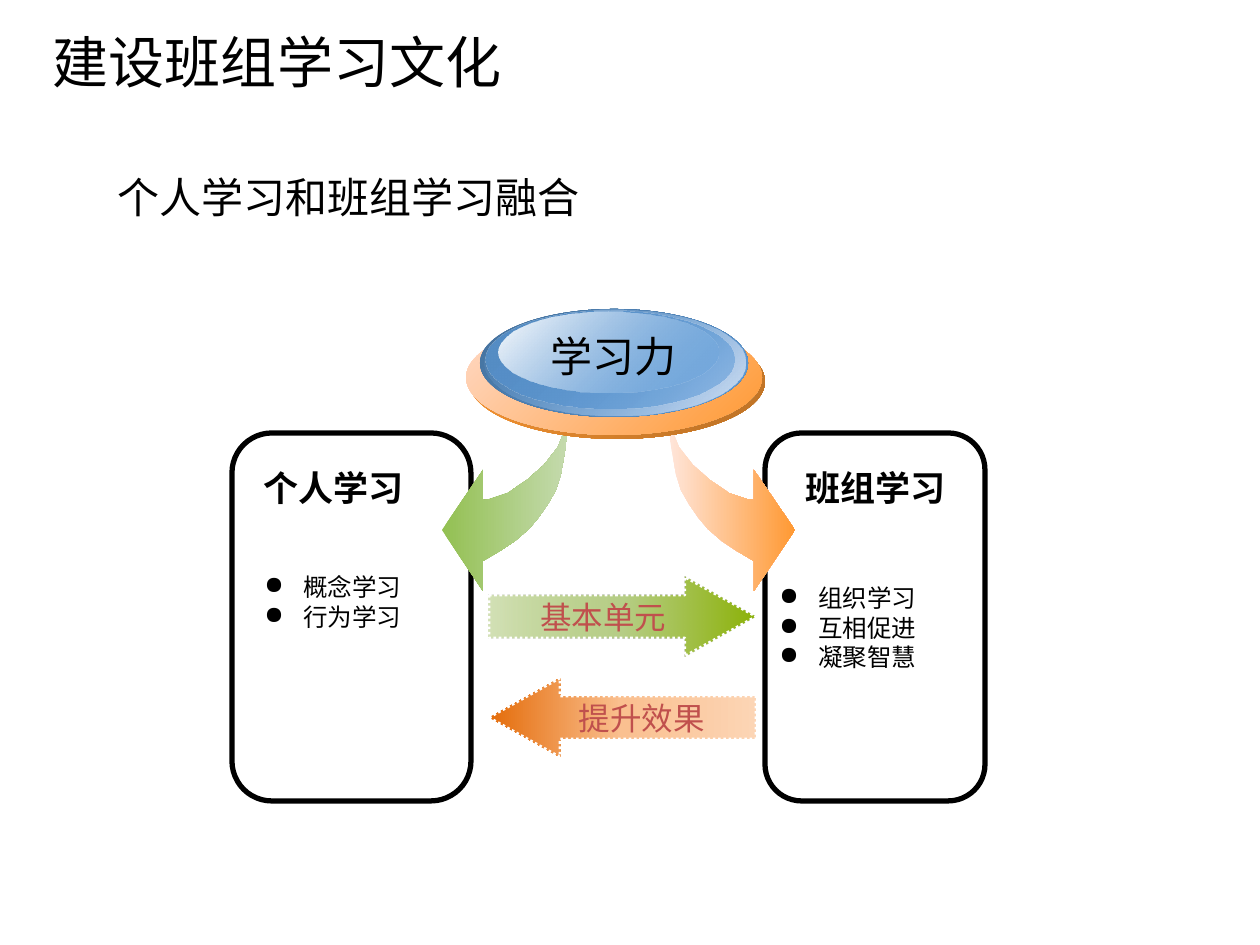
from lxml import etree
from pptx import Presentation
from pptx.dml.color import RGBColor
from pptx.enum.dml import MSO_LINE
from pptx.enum.shapes import MSO_SHAPE
from pptx.enum.text import MSO_ANCHOR, PP_ALIGN
from pptx.oxml.ns import qn
from pptx.util import Emu, Pt

PX_PER_INCH = 126
ROUND_RECT, OVAL = MSO_SHAPE.ROUNDED_RECTANGLE, MSO_SHAPE.OVAL
LEFT_ARROW, RIGHT_ARROW = MSO_SHAPE.LEFT_ARROW, MSO_SHAPE.RIGHT_ARROW
DOTTED = MSO_LINE.ROUND_DOT
TOP, MIDDLE = MSO_ANCHOR.TOP, MSO_ANCHOR.MIDDLE
LEFT, CENTER = PP_ALIGN.LEFT, PP_ALIGN.CENTER
CJK, ARIAL, CALIBRI = "Noto Sans CJK SC", "Arial", "Calibri"

BLACK = RGBColor(0x00, 0x00, 0x00)
WHITE = RGBColor(0xFF, 0xFF, 0xFF)
RED = RGBColor(0xC0, 0x50, 0x4D)
LEAF = RGBColor(0x93, 0xC0, 0x52)
LEAF_PALE = RGBColor(0xC4, 0xDA, 0xAD)
ORANGE = RGBColor(0xFF, 0x99, 0x33)
ORANGE_DARK = RGBColor(0xBA, 0x70, 0x25)
PEACH = RGBColor(0xFF, 0xDA, 0xC7)
PEACH_PALE = RGBColor(0xFF, 0xE5, 0xD9)
NAVY = RGBColor(0x43, 0x70, 0x9C)
STEEL = RGBColor(0x55, 0x8D, 0xC5)
BLUE = RGBColor(0x5E, 0x9C, 0xDA)
BLUE_PALE = RGBColor(0xD8, 0xE3, 0xF3)
OLIVE = RGBColor(0x8C, 0xB2, 0x08)
OLIVE_MID = RGBColor(0xB7, 0xCE, 0x87)
OLIVE_PALE = RGBColor(0x9B, 0xBB, 0x59)
RUST = RGBColor(0xE4, 0x6C, 0x0A)
RUST_MID = RGBColor(0xFA, 0xC0, 0x90)
RUST_PALE = RGBColor(0xFC, 0xD5, 0xB5)

MIRROR_SUM = 1237
CURVED_ARROW = [
    (567, 420), (567, 440), (564, 457), (561, 474), (556, 490), (548, 504),
    (539, 517), (529, 529), (515, 541), (500, 551), (483, 561), (483, 591),
    (442, 530), (483, 470), (483, 500), (490, 499), (499, 496), (508, 493),
    (518, 486), (527, 480), (536, 472), (544, 465), (551, 456), (558, 447),
    (562, 437), (566, 428),
]
DISC_LAYERS = [
    ((469, 324, 296, 115), [(0, ORANGE, 100), (100, ORANGE_DARK, 100)]),
    ((466, 320, 296, 115), [(0, PEACH, 100), (100, ORANGE, 100)]),
    ((480, 309, 268, 108), [(0, NAVY, 100), (100, BLUE, 100)]),
    ((484, 310, 261, 106), [(0, BLUE, 0), (100, BLUE_PALE, 100)]),
    ((486, 311, 248, 98), [(0, STEEL, 100), (100, BLUE, 48)]),
    ((499, 312, 219, 81), [(0, WHITE, 100), (100, BLUE, 38)]),
]


def px(n):
    return Emu(round(n * 914400 / PX_PER_INCH))


def fill_gradient(s, stops, angle=0):
    s.fill.gradient()
    grad = s.fill._xPr.find(qn("a:gradFill"))
    for child in list(grad):
        grad.remove(child)
    gs_list = etree.SubElement(grad, qn("a:gsLst"))
    for pos, color, alpha in stops:
        gs = etree.SubElement(gs_list, qn("a:gs"), pos=str(pos * 1000))
        clr = etree.SubElement(gs, qn("a:srgbClr"), val=str(color))
        if alpha < 100:
            etree.SubElement(clr, qn("a:alpha"), val=str(alpha * 1000))
    etree.SubElement(grad, qn("a:lin"), ang=str(angle * 60000), scaled="0")


def add_bullet(p, indent):
    pPr = p._p.get_or_add_pPr()
    pPr.set("marL", str(indent))
    pPr.set("indent", str(-indent))
    etree.SubElement(pPr, qn("a:buChar"), char="●")


def write_text(s, lines, size, font=CJK, color=BLACK, bold=False,
               align=LEFT, anchor=TOP, wrap=True, bullets=False):
    tf = s.text_frame
    tf.word_wrap = wrap
    tf.vertical_anchor = anchor
    for i, line in enumerate(lines):
        p = tf.add_paragraph() if i else tf.paragraphs[0]
        p.alignment = align
        if bullets:
            add_bullet(p, px(39))
        r = p.add_run()
        r.text = line
        r.font.size = Pt(size)
        r.font.bold = bold
        r.font.color.rgb = color
        r.font.name = font
        etree.SubElement(r._r.get_or_add_rPr(), qn("a:ea"), typeface=CJK)


def add_text(slide, box, lines, size, **fmt):
    s = slide.shapes.add_textbox(*map(px, box))
    write_text(s, lines, size, **fmt)


def add_title(slide, text):
    s = slide.shapes.title
    s.left, s.top, s.width, s.height = map(px, (0, 0, 1260, 123))
    s.text_frame.margin_left = px(53)
    write_text(s, [text], 32, anchor=MIDDLE)


def add_panel(slide, box):
    s = slide.shapes.add_shape(ROUND_RECT, *map(px, box))
    s.shadow.inherit = False
    s.fill.background()
    s.line.color.rgb = BLACK
    s.line.width = Pt(3)


def add_curved_arrow(slide, points, stops):
    builder = slide.shapes.build_freeform(*map(px, points[0]), scale=1.0)
    builder.add_line_segments([(px(x), px(y)) for x, y in points[1:]], close=True)
    s = builder.convert_to_shape()
    s.shadow.inherit = False
    fill_gradient(s, stops)
    s.line.fill.background()


def add_disc(slide):
    for box, stops in DISC_LAYERS:
        s = slide.shapes.add_shape(OVAL, *map(px, box))
        s.shadow.inherit = False
        fill_gradient(s, stops, angle=45)
        s.line.fill.background()


def add_block_arrow(slide, kind, top, text, stops):
    s = slide.shapes.add_shape(kind, *map(px, (489, top, 267, 79)))
    s.shadow.inherit = False
    s.adjustments[0], s.adjustments[1] = 0.54, 0.9
    fill_gradient(s, stops)
    s.line.color.rgb = WHITE
    s.line.width = Pt(1.5)
    s.line.dash_style = DOTTED
    write_text(s, [text], 18, color=RED, align=CENTER, anchor=MIDDLE, wrap=False)


def main():
    prs = Presentation()
    prs.slide_width, prs.slide_height = px(1260), px(945)
    slide = prs.slides.add_slide(prs.slide_layouts[5])

    add_title(slide, "建设班组学习文化")
    add_text(slide, (105, 165, 1131, 59), ["个人学习和班组学习融合"], 24, font=CALIBRI)

    add_panel(slide, (765, 433, 220, 368))
    add_panel(slide, (232, 433, 239, 368))
    for left, heading in ((251, "个人学习"), (793, "班组学习")):
        add_text(slide, (left, 460, 281, 55), [heading], 20, font=ARIAL, bold=True)

    add_curved_arrow(slide, CURVED_ARROW, [(0, LEAF, 100), (100, LEAF_PALE, 100)])
    add_curved_arrow(slide, [(MIRROR_SUM - x, y) for x, y in CURVED_ARROW],
                     [(0, PEACH_PALE, 100), (100, ORANGE, 100)])

    add_disc(slide)
    add_text(slide, (538, 324, 152, 63), ["学习力"], 24, align=CENTER, wrap=False)

    add_block_arrow(slide, RIGHT_ARROW, 577, "基本单元",
                    [(0, OLIVE_PALE, 43), (50, OLIVE_MID, 100), (100, OLIVE, 100)])
    add_block_arrow(slide, LEFT_ARROW, 678, "提升效果",
                    [(0, RUST, 100), (50, RUST_MID, 100), (100, RUST_PALE, 100)])

    add_text(slide, (252, 566, 315, 72), ["概念学习", "行为学习"], 14,
             font=CALIBRI, bullets=True)
    add_text(slide, (767, 577, 315, 102), ["组织学习", "互相促进", "凝聚智慧"], 14,
             font=CALIBRI, bullets=True)

    prs.save("out.pptx")


if __name__ == "__main__":
    main()
